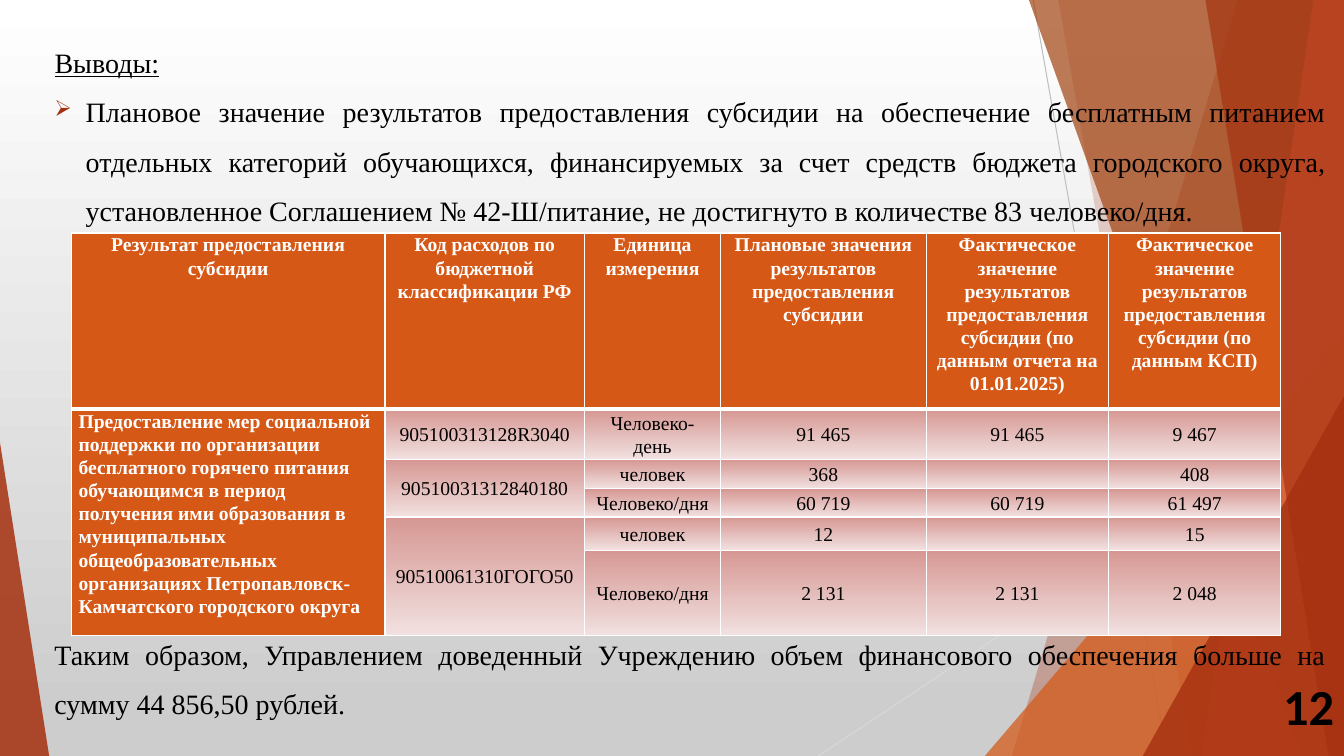
from lxml import etree
from pptx import Presentation
from pptx.dml.color import RGBColor
from pptx.enum.shapes import MSO_CONNECTOR, MSO_SHAPE
from pptx.enum.text import MSO_ANCHOR, MSO_AUTO_SIZE, PP_ALIGN
from pptx.oxml.ns import qn
from pptx.util import Cm, Pt

LEFT, CENTER, RIGHT, JUSTIFY = PP_ALIGN.LEFT, PP_ALIGN.CENTER, PP_ALIGN.RIGHT, PP_ALIGN.JUSTIFY
TOP, MIDDLE = MSO_ANCHOR.TOP, MSO_ANCHOR.MIDDLE
NO_FIT = MSO_AUTO_SIZE.NONE
STRAIGHT = MSO_CONNECTOR.STRAIGHT
TRIANGLE = MSO_SHAPE.ISOSCELES_TRIANGLE

SERIF, SANS = "Times New Roman", "Calibri"
WIDE, HIGH = 33.87, 19.05
LOOSE = 1.47
HUES = {
    "black": "000000", "white": "FFFFFF", "gray": "CDCDCD",
    "line": "BFBFBF", "pale": "D9D9D9",
    "red": "A5300F", "orange": "D55816", "brown": "A04210", "coral": "EE6E4A",
    "rose": "D69793", "blush": "F1E1E0",
}

WIDTHS = [7.9, 5.03, 3.43, 5.18, 4.6, 4.34]
HEIGHTS = [4.27, 1.22, 0.74, 0.71, 0.84, 1.98]
ROWS = [
    ["Результат предоставления субсидии",
     "Код расходов по бюджетной классификации РФ",
     "Единица измерения",
     "Плановые значения результатов предоставления субсидии",
     "Фактическое значение результатов предоставления субсидии (по данным отчета на 01.01.2025)",
     "Фактическое значение результатов предоставления субсидии (по данным КСП)"],
    ["Предоставление мер социальной поддержки по организации бесплатного горячего питания "
     "обучающимся в период получения ими образования в муниципальных общеобразовательных "
     "организациях Петропавловск-Камчатского городского округа",
     "905100313128R3040", "Человеко-день", "91 465", "91 465", "9 467"],
    ["", "90510031312840180", "человек", "368", "", "408"],
    ["", "", "Человеко/дня", "60 719", "60 719", "61 497"],
    ["", "90510061310ГОГО50", "человек", "12", "", "15"],
    ["", "", "Человеко/дня", "2 131", "2 131", "2 048"],
]
MERGES = [(1, 0, 5, 0), (2, 1, 3, 1), (4, 1, 5, 1)]


def hue(name):
    return RGBColor.from_string(HUES[name])


def shade(fill, start, end, stop=1.0):
    fill.gradient()
    fill.gradient_angle = 270
    first, last = fill.gradient_stops
    first.color.rgb, last.color.rgb = hue(start), hue(end)
    first.position, last.position = 0, stop


def style(para, size, color="black", face=SERIF, bold=False, align=JUSTIFY, space=None):
    para.alignment = align
    para.line_spacing = space
    font = para.font
    font.size, font.name, font.bold = Pt(size), face, bold
    font.color.rgb = hue(color)


def tint(shape, color, alpha):
    shape.shadow.inherit = False
    shape.fill.solid()
    shape.fill.fore_color.rgb = hue(color)
    shape.line.fill.background()
    node = next(shape._element.iter(qn("a:srgbClr")))
    etree.SubElement(node, qn("a:alpha")).set("val", str(alpha * 1000))


def add_ray(slide, start, end, color):
    ray = slide.shapes.add_connector(STRAIGHT, *map(Cm, start + end))
    ray.line.color.rgb = hue(color)
    ray.line.width = Pt(0.75)
    etree.SubElement(ray._element.spPr, qn("a:effectLst"))


def add_facet(slide, top, base, color, alpha):
    pen = slide.shapes.build_freeform(Cm(top), 0)
    pen.add_line_segments(
        [(Cm(WIDE), 0), (Cm(WIDE), Cm(HIGH)), (Cm(base), Cm(HIGH))], close=True)
    tint(pen.convert_to_shape(), color, alpha)


def add_wedge(slide, left, top, width, peak, color, alpha):
    wedge = slide.shapes.add_shape(TRIANGLE, Cm(left), Cm(top), Cm(width), Cm(HIGH - top))
    wedge.adjustments[0] = peak
    tint(wedge, color, alpha)


def add_decor(slide):
    shade(slide.background.fill, "white", "gray", 0.94)
    add_ray(slide, (26.04, 0), (29.41, HIGH), "line")
    add_ray(slide, (WIDE, 10.24), (20.62, HIGH), "pale")
    add_facet(slide, 31.19, 25.5, "red", 30)
    add_facet(slide, 26.67, 30.05, "red", 20)
    add_wedge(slide, 24.82, 8.46, 9.05, 1, "orange", 72)
    add_facet(slide, 25.93, 32.79, "brown", 70)
    add_facet(slide, 33.1, 30.28, "coral", 70)
    add_facet(slide, 30.38, 33.48, "red", 65)
    add_wedge(slide, 28.8, 9.98, 5.07, 1, "red", 80)
    add_wedge(slide, 0, 11.15, 1.24, 0, "red", 85)


def add_title(slide, left, top, width, height):
    title = slide.shapes.title
    title.left, title.top, title.width, title.height = map(Cm, (left, top, width, height))
    frame = title.text_frame
    frame.text = "Выводы:"
    frame.vertical_anchor, frame.auto_size = TOP, NO_FIT
    style(frame.paragraphs[0], 20, align=LEFT, space=LOOSE)
    frame.paragraphs[0].font.underline = True


def add_text(slide, text, left, top, width, height, anchor=TOP):
    frame = slide.shapes.add_textbox(*map(Cm, (left, top, width, height))).text_frame
    frame.word_wrap = True
    frame.vertical_anchor = anchor
    frame.text = text
    return frame.paragraphs[0]


def add_mark(para):
    props = para._p.get_or_add_pPr()
    props.set("marL", str(Cm(0.79)))
    props.set("indent", str(-Cm(0.79)))
    tone = etree.SubElement(props, qn("a:buClr"))
    etree.SubElement(tone, qn("a:srgbClr")).set("val", HUES["red"])
    etree.SubElement(props, qn("a:buSzPct")).set("val", "80000")
    etree.SubElement(props, qn("a:buChar")).set("char", "➢")


def add_edges(cell, row):
    props = cell._tc.get_or_add_tcPr()
    bold = {(0, "B"), (1, "T")}
    for side in "LRTB":
        width = Pt(3 if (row, side) in bold else 1)
        edge = etree.SubElement(props, qn("a:ln" + side), w=str(width))
        fill = etree.SubElement(edge, qn("a:solidFill"))
        etree.SubElement(fill, qn("a:srgbClr")).set("val", HUES["white"])


def fill_cell(cell, row, col, text):
    head = row == 0 or col == 0
    add_edges(cell, row)
    if head:
        cell.fill.solid()
        cell.fill.fore_color.rgb = hue("orange")
    else:
        shade(cell.fill, "rose", "blush")
    cell.margin_left = cell.margin_right = Cm(0.18)
    cell.margin_top = cell.margin_bottom = 0
    cell.vertical_anchor = TOP if head else MIDDLE
    cell.text = text
    para = cell.text_frame.paragraphs[0]
    if not text:
        para._p.get_or_add_endParaRPr().set("sz", "1400")
    style(para, 14, "white" if head else "black", bold=head,
          align=LEFT if row and col == 0 else CENTER, space=1.07)


def add_grid(slide, left, top):
    size = sum(WIDTHS), sum(HEIGHTS)
    table = slide.shapes.add_table(
        len(ROWS), len(WIDTHS), *map(Cm, (left, top) + size)).table
    for col, width in zip(table.columns, WIDTHS):
        col.width = Cm(width)
    for row, height in zip(table.rows, HEIGHTS):
        row.height = Cm(height)
    for r, texts in enumerate(ROWS):
        for c, text in enumerate(texts):
            fill_cell(table.cell(r, c), r, c, text)
    for r, c, last, end in MERGES:
        table.cell(r, c).merge(table.cell(last, end))


def add_body(slide, left, top, width):
    add_title(slide, left, top, 10, 1.25)
    point = add_text(
        slide,
        "Плановое значение результатов предоставления субсидии на обеспечение бесплатным "
        "питанием отдельных категорий обучающихся, финансируемых за счет средств бюджета "
        "городского округа, установленное Соглашением № 42-Ш/питание, не достигнуто "
        "в количестве 83 человеко/дня.",
        left, top + 1.25, width, 4)
    add_mark(point)
    style(point, 20, space=LOOSE)
    close = add_text(
        slide,
        "Таким образом, Управлением доведенный Учреждению объем финансового обеспечения "
        "больше на сумму 44 856,50 рублей.",
        left, top + 14.92, width, 2.75)
    style(close, 20, space=LOOSE)


def main():
    deck = Presentation()
    deck.slide_width, deck.slide_height = Cm(WIDE), Cm(HIGH)
    slide = deck.slides.add_slide(deck.slide_layouts[5])
    add_decor(slide)
    add_body(slide, 1.12, 0.62, 32.54)
    number = add_text(slide, "12", 31.75, 16.48, 2.12, 2.57, MIDDLE)
    style(number, 36, face=SANS, bold=True, align=RIGHT)
    add_grid(slide, 1.8, 5.87)
    deck.save("out.pptx")


if __name__ == "__main__":
    main()
